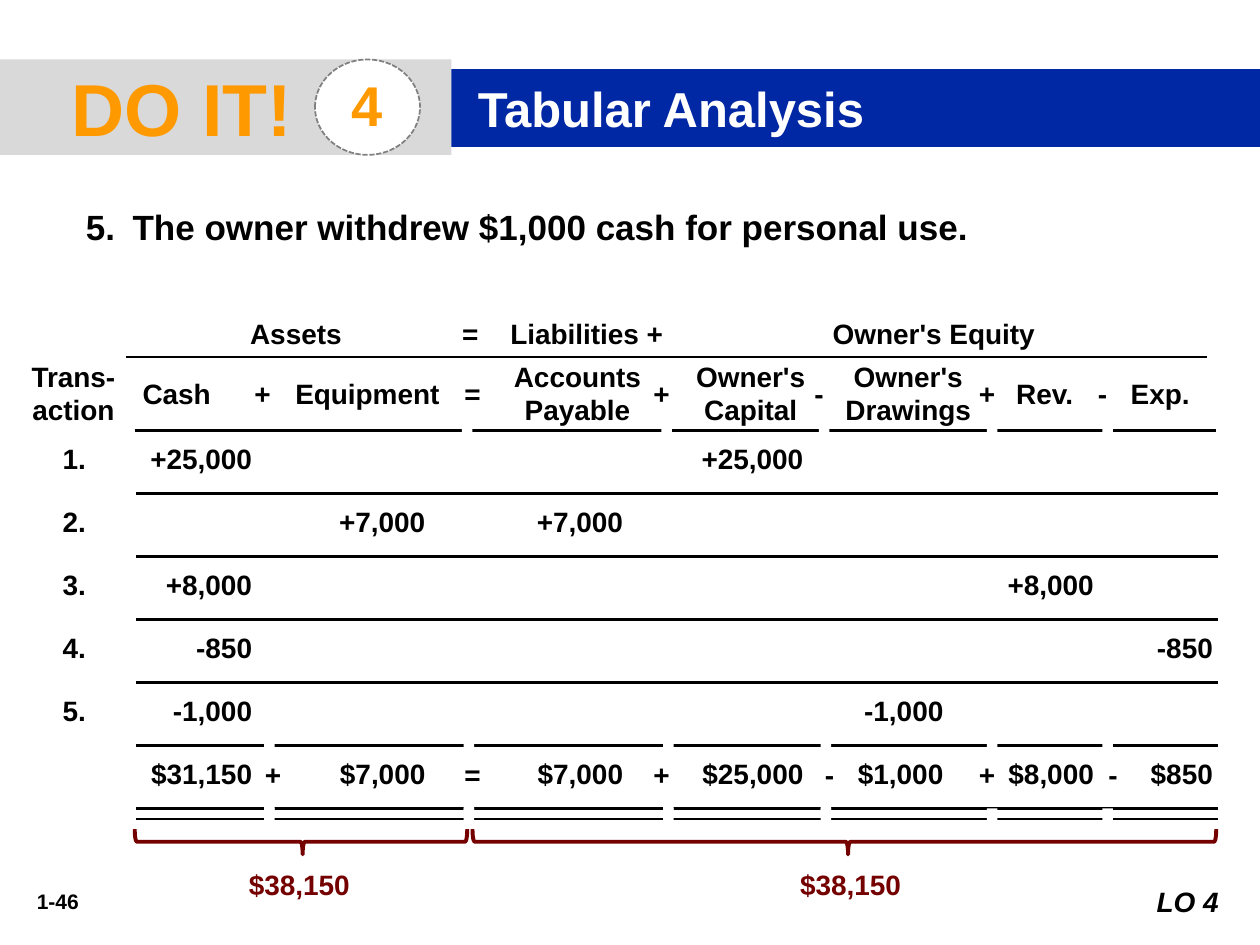
from lxml import etree
from pptx import Presentation
from pptx.dml.color import RGBColor
from pptx.enum.dml import MSO_LINE
from pptx.enum.shapes import MSO_CONNECTOR, MSO_SHAPE
from pptx.enum.text import MSO_ANCHOR, PP_ALIGN
from pptx.oxml.ns import qn
from pptx.util import Pt

LEFT, MID, RIGHT = PP_ALIGN.LEFT, PP_ALIGN.CENTER, PP_ALIGN.RIGHT
TOP, CENTER = MSO_ANCHOR.TOP, MSO_ANCHOR.MIDDLE
RECT, OVAL, BRACE = MSO_SHAPE.RECTANGLE, MSO_SHAPE.OVAL, MSO_SHAPE.LEFT_BRACE
STRAIGHT, DASH = MSO_CONNECTOR.STRAIGHT, MSO_LINE.SQUARE_DOT

BLACK = RGBColor(0x00, 0x00, 0x00)
WHITE = RGBColor(0xFF, 0xFF, 0xFF)
SILVER = RGBColor(0xD9, 0xD9, 0xD9)
GRAY = RGBColor(0x80, 0x80, 0x80)
ORANGE = RGBColor(0xFF, 0x99, 0x00)
BLUE = RGBColor(0x00, 0x27, 0xA4)
MAROON = RGBColor(0x74, 0x00, 0x00)

PAD = (7.2, 3.6, 7.2, 3.6)
GAP = 6
STEP = 36
STOPS = [(x, "r") for x in (18, 113, 212, 325, 428, 508, 594, 662)]
ROWS = [
    ("1.", "+25,000", "", "", "+25,000"),
    ("2.", "", "+7,000", "+7,000"),
    ("3.", "+8,000", "", "", "", "", "+8,000"),
    ("4.", "-850", "", "", "", "", "", "-850"),
    ("5.", "-1,000", "", "", "", "-1,000"),
]
TOTAL = ("", "$31,150", "$7,000", "$7,000", "$25,000", "$1,000", "$8,000", "$850")


def write(shape, text, size=16, color=BLACK, align=MID, anchor=CENTER,
          pad=PAD, indent=0, italic=None):
    frame = shape.text_frame
    sides = ("margin_left", "margin_top", "margin_right", "margin_bottom")
    look = dict(zip(sides, map(Pt, pad)), word_wrap=True, vertical_anchor=anchor)
    for key, value in look.items():
        setattr(frame, key, value)
    frame.text = text
    font = {"name": "Arial", "size": Pt(size), "bold": True, "italic": italic}
    for para in frame.paragraphs:
        para.alignment = align
        if indent:
            para._p.get_or_add_pPr().set("marL", str(Pt(indent)))
        for run in para.runs:
            for key, value in font.items():
                setattr(run.font, key, value)
            run.font.color.rgb = color
    return frame.paragraphs[0]


def label(slide, box, text, **look):
    return write(slide.shapes.add_textbox(*map(Pt, box)), text, **look)


def block(slide, box, fill, kind=RECT):
    shape = slide.shapes.add_shape(kind, *map(Pt, box))
    shape.shadow.inherit = False
    shape.fill.solid()
    shape.fill.fore_color.rgb = fill
    shape.line.fill.background()
    return shape


def rule(slide, left, top, width):
    line = slide.shapes.add_connector(
        STRAIGHT, Pt(left), Pt(top), Pt(left + width), Pt(top))
    line.line.color.rgb = BLACK
    line.line.width = Pt(1.5)
    etree.SubElement(line._element.spPr, qn("a:effectLst"))


def breaks(slide, top, spots):
    """Interrupt a rule between columns."""
    for left in spots:
        block(slide, (left, top, GAP, 12), WHITE)


def tabs(para, stops):
    group = etree.SubElement(para._p.get_or_add_pPr(), qn("a:tabLst"))
    for pos, align in stops:
        etree.SubElement(group, qn("a:tab"), pos=str(Pt(pos)), algn=align)


def signs(slide, top, spots, pad):
    for left, sign in spots:
        label(slide, (left, top, 12, 41), sign, pad=pad)


def banner(slide, left, top, width, height):
    split = 258
    tag = block(slide, (left, top, split, height), SILVER)
    write(tag, "DO IT!", 42, ORANGE, LEFT, pad=(0, 0, 7.2, 0), indent=41)
    disc = block(slide, (left + 180, top, 60, height), WHITE, OVAL)
    disc.line.color.rgb = GRAY
    disc.line.width = Pt(1)
    disc.line.dash_style = DASH
    write(disc, "4", 32, ORANGE, pad=(7.2, 0, 7.2, 3.6))
    bar = block(slide, (left + split, top + 5.5, width - split, 44.5), BLUE)
    write(bar, "Tabular Analysis", 28, WHITE, LEFT,
          pad=(6.5, 3.6, 6.5, 3.6), indent=8.6)


def task(slide, box):
    para = label(slide, box, "The owner withdrew $1,000 cash for personal use.",
                 size=20, align=LEFT, anchor=TOP, indent=26.64)
    para.line_spacing = 1.25
    para.space_before = Pt(9)
    props = para._p.get_or_add_pPr()
    props.set("indent", str(-Pt(26.64)))
    etree.SubElement(props, qn("a:buFont"), typeface="+mj-lt")
    etree.SubElement(props, qn("a:buAutoNum"), type="arabicPeriod", startAt="5")


def head(slide, left, top, width):
    para = label(slide, (left, top, width, 21),
                 "\tAssets\t=\tLiabilities +\tOwner's Equity", align=LEFT)
    tabs(para, [(90, "ctr"), (185, "l"), (212.5, "l"), (454.5, "ctr")])
    rule(slide, left, top + 24, 618)
    rule(slide, left + 5, top + 66, 618)
    breaks(slide, top + 60, [left + x for x in (192, 306, 396, 492, 558)])
    names = [
        (-66, 72, "Trans-\naction"), (0, 58, "Cash"), (84, 108, "Equipment"),
        (204, 108, "Accounts\nPayable"), (306, 102, "Owner's Capital"),
        (402, 90, "Owner's Drawings"), (492, 66, "Rev."), (558, 66, "Exp."),
    ]
    for shift, wide, name in names:
        label(slide, (left + shift, top + 24, wide, 41), name)
    spots = zip((72, 192, 300, 390, 486, 552), "+=+-+-")
    signs(slide, top + 24, [(left + x, s) for x, s in spots], (0, 3.6, 0, 3.6))


def row(slide, left, top, cells):
    para = label(slide, (left, top, 684, 23), "\t" + "\t".join(cells),
                 align=LEFT, anchor=TOP, pad=(7.2, 0, 7.2, 3.6))
    tabs(para, STOPS)


def ledger(slide, left, top):
    for i, cells in enumerate(ROWS):
        row(slide, left, top + STEP * i, cells)
        rule(slide, left + 54, top + 29.5 + STEP * i, 618)


def totals(slide, left, top):
    spots = [left + x for x in (127, 241, 355, 445, 540, 606)]
    rule(slide, left + 54, top + 29.5, 618)
    breaks(slide, top - 12.5, spots)
    breaks(slide, top + 23.5, spots[:4])
    rule(slide, left + 54, top + 35.5, 618)
    breaks(slide, top + 29.5, spots)
    row(slide, left, top, TOTAL)
    marks = zip((126, 240, 348, 444, 534, 606), "+=+-+-")
    signs(slide, top - 12.5, [(left + x, s) for x, s in marks], (0, 7.2, 0, 3.6))


def total(slide, left, top, width, spot):
    """Brace over the given width, with its sum centred on spot."""
    deep = 14.4
    mid = left + width / 2
    box = (mid - deep / 2, top + (deep - width) / 2, deep, width)
    brace = slide.shapes.add_shape(BRACE, *map(Pt, box))
    brace.rotation = 270
    brace.shadow.inherit = False
    brace.fill.background()
    brace.line.color.rgb = MAROON
    brace.line.width = Pt(2.25)
    for i, value in enumerate((0.083, 0.505)):
        brace.adjustments[i] = value
    label(slide, (spot - 54, top + 18, 108, 26.6), "$38,150", color=MAROON)


def footer(slide, left, top, width):
    label(slide, (left, top + 2, 54, 21.6), "1-46", size=12)
    mark = block(slide, (left + width - 60, top, 60, 26.6), WHITE)
    write(mark, "LO 4", align=RIGHT, pad=(7.2, 3.6, 11.6, 3.6), italic=True)


def main():
    deck = Presentation()
    deck.slide_width, deck.slide_height = Pt(720), Pt(540)
    slide = deck.slides.add_slide(deck.slide_layouts[6])
    banner(slide, 0, 34, 720, 54.5)
    task(slide, (42, 108, 661, 37.5))
    head(slide, 72, 180, 624)
    ledger(slide, 24, 252.5)
    totals(slide, 24, 432.5)
    total(slide, 77, 473.8, 190, 171)
    total(slide, 270, 473.8, 425, 486)
    footer(slide, 6, 502, 702)
    deck.save("out.pptx")


if __name__ == "__main__":
    main()
